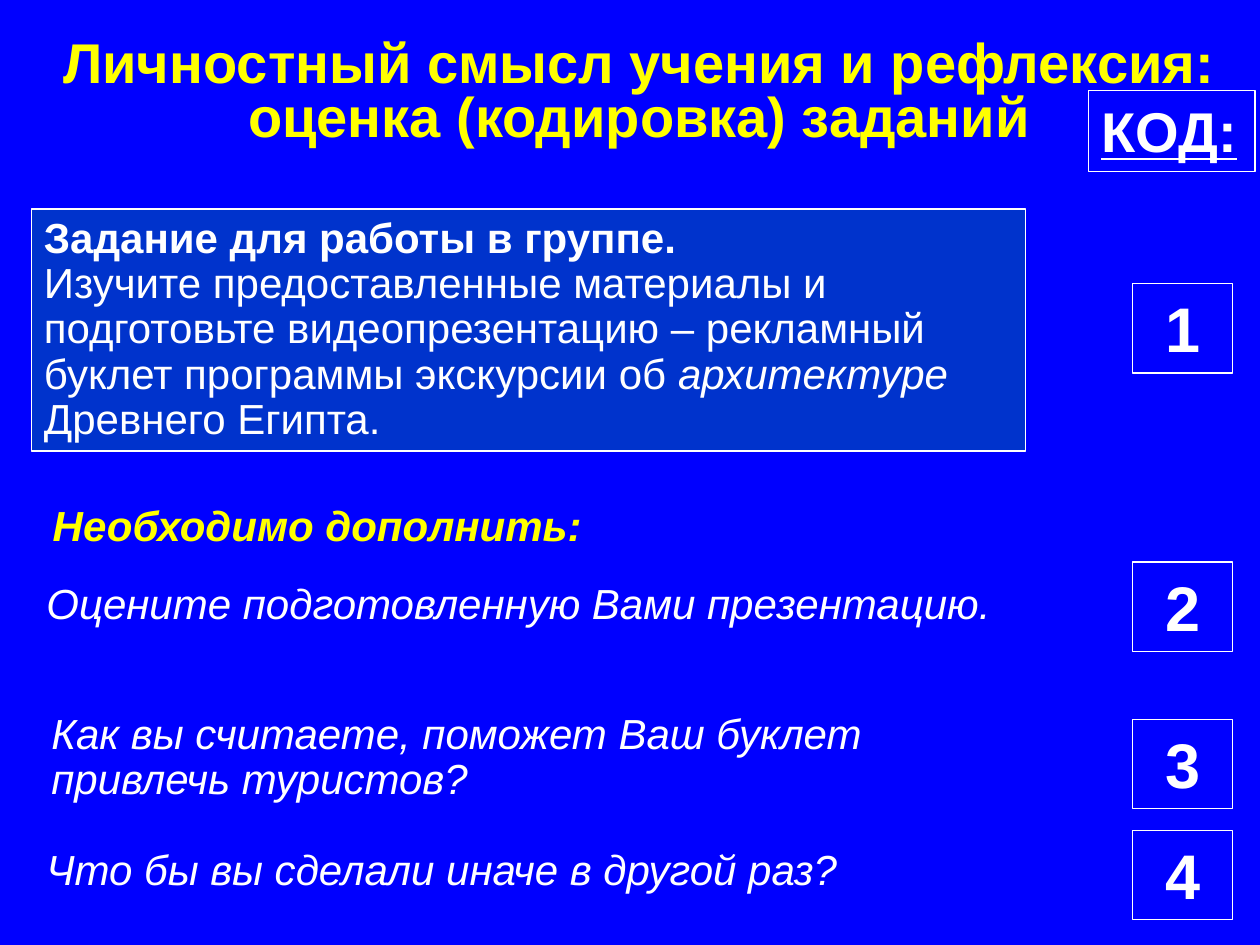
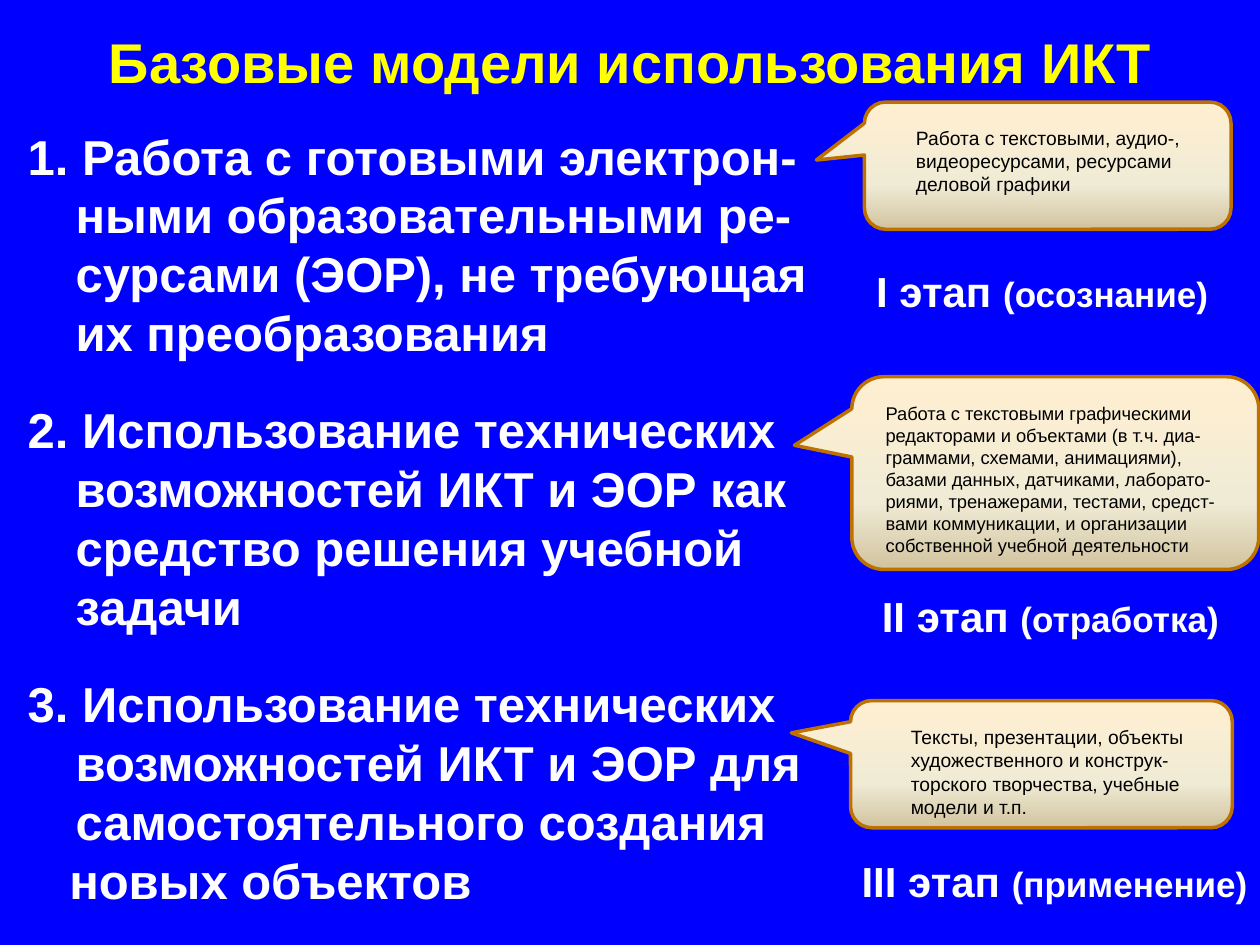
from dataclasses import dataclass

from lxml.etree import SubElement
from pptx import Presentation
from pptx.dml.color import RGBColor
from pptx.enum.shapes import MSO_SHAPE
from pptx.enum.text import MSO_ANCHOR, MSO_AUTO_SIZE, PP_ALIGN
from pptx.oxml.ns import qn
from pptx.util import Inches, Pt


@dataclass(frozen=True)
class Theme:
    font: str = "Arial"
    background: str = "0000FF"
    panel: str = "0033CC"
    accent: str = "FFFF00"
    light: str = "FFFFFF"
    dark: str = "000000"
    callout_line: str = "BD7100"
    callout_stops: tuple = ((0, "FFEFD1"), (65, "F0EBD5"), (100, "D1C39F"))
    title_size: float = 32
    code_size: float = 36
    model_size: float = 28
    text_size: float = 24
    note_size: float = 20
    callout_size: float = 11
    dense_callout_size: float = 10.5


THEME = Theme()
TITLE_ONLY, TITLE_AND_BODY = 5, 1


def set_attributes(target, values):
    for name, value in values.items():
        setattr(target, name, value)


def rgb(value):
    return RGBColor.from_string(value)


def inches(box):
    return [Inches(length) for length in box]


class Deck:
    """Holds the style and the current slide; boxes are (left, top, width, height) in inches."""

    def __init__(self, theme):
        self.theme = theme
        self.presentation = Presentation()
        set_attributes(self.presentation, {"slide_width": Inches(10), "slide_height": Inches(7.5)})
        fill = self.presentation.slide_master.background.fill
        fill.solid()
        fill.fore_color.rgb = rgb(theme.background)
        self.slide = None

    def new_slide(self, layout, title_box, title_lines):
        """Line spacing of the title tightens after its first line."""
        self.slide = self.presentation.slides.add_slide(self.presentation.slide_layouts[layout])
        title = self.slide.shapes.title
        self.place(title, title_box)
        style = {"size": self.theme.title_size, "bold": True, "color": self.theme.accent}
        self.fill_frame(title.text_frame, [[(line, style)] for line in title_lines],
                        alignment=PP_ALIGN.CENTER)
        for paragraph in title.text_frame.paragraphs[1:]:
            paragraph.line_spacing = 0.8

    def place(self, shape, box):
        set_attributes(shape, dict(zip(("left", "top", "width", "height"), inches(box))))

    def fill_frame(self, frame, paragraphs, anchor=MSO_ANCHOR.TOP, **paragraph_format):
        """Each paragraph is a list of (text, style) runs; a newline breaks the line."""
        set_attributes(frame, {"word_wrap": True, "auto_size": MSO_AUTO_SIZE.NONE,
                               "vertical_anchor": anchor})
        for number, runs in enumerate(paragraphs):
            paragraph = frame.add_paragraph() if number else frame.paragraphs[0]
            set_attributes(paragraph, {"alignment": PP_ALIGN.LEFT, **paragraph_format})
            for text, style in runs:
                for line_number, line in enumerate(text.split("\n")):
                    if line_number:
                        paragraph.add_line_break()
                    run = paragraph.add_run()
                    run.text = line
                    self.style_font(run.font, **style)

    def style_font(self, font, size, color=None, **flags):
        set_attributes(font, {"name": self.theme.font, "size": Pt(size), **flags})
        font.color.rgb = rgb(color or self.theme.light)

    def text(self, box, paragraphs, **paragraph_format):
        label = self.slide.shapes.add_textbox(*inches(box))
        self.fill_frame(label.text_frame, paragraphs, **paragraph_format)

    def panel(self, box, paragraphs, fill=None, **text_format):
        frame = self.slide.shapes.add_shape(MSO_SHAPE.RECTANGLE, *inches(box))
        frame.shadow.inherit = False
        if fill:
            frame.fill.solid()
            frame.fill.fore_color.rgb = rgb(fill)
        else:
            frame.fill.background()
        self.outline(frame, self.theme.light, 0.75)
        self.fill_frame(frame.text_frame, paragraphs, **text_format)

    def outline(self, shape, color, width):
        shape.line.color.rgb = rgb(color)
        shape.line.width = Pt(width)

    def callout(self, box, tail):
        """Draws a callout turned by 90 degrees that covers the given box."""
        left, top, width, height = box
        turn = (width - height) / 2
        bubble = self.slide.shapes.add_shape(
            MSO_SHAPE.ROUNDED_RECTANGULAR_CALLOUT,
            *inches((left + turn, top - turn, height, width)))
        bubble.rotation = 90
        bubble.shadow.inherit = False
        for index, adjustment in enumerate((*tail, 0.167)):
            bubble.adjustments[index] = adjustment
        bubble.fill.gradient()
        bubble.fill.gradient_angle = 0
        stops = bubble._element.spPr.find(qn("a:gradFill")).find(qn("a:gsLst"))
        stops.clear()
        for position, color in self.theme.callout_stops:
            stop = SubElement(stops, qn("a:gs"), pos=str(position * 1000))
            SubElement(stop, qn("a:srgbClr"), val=color)
        self.outline(bubble, self.theme.callout_line, 2)

    def body_list(self, box, items, hanging, gap):
        """Each item is (text, continues), where continues marks a further line of the item above."""
        body = self.slide.placeholders[1]
        self.place(body, box)
        style = {"size": self.theme.model_size, "bold": True}
        self.fill_frame(body.text_frame, [[(text, style)] for text, _ in items])
        for number, (paragraph, (_, continues)) in enumerate(zip(body.text_frame.paragraphs, items)):
            paragraph.space_before = Pt(0 if continues or not number else gap)
            properties = paragraph._p.get_or_add_pPr()
            left, first_line = (0.33, 0) if continues else (hanging, -hanging)
            properties.set("marL", str(Inches(left)))
            properties.set("indent", str(Inches(first_line)))
            SubElement(properties, qn("a:buNone"))


def build_coding_slide(deck):
    theme = deck.theme
    plain = {"size": theme.text_size}
    italic = {**plain, "italic": True}
    deck.new_slide(TITLE_ONLY, (0.35, 0.17, 9.45, 1.06),
                   ["Личностный смысл учения и рефлексия:", "оценка (кодировка) заданий"])
    deck.panel((8.64, 0.72, 1.32, 0.64),
               [[("КОД:", {"size": theme.title_size, "bold": True, "underline": True})]])
    deck.panel((0.25, 1.66, 7.89, 1.92), [
        [("Задание для работы в группе.", {**plain, "bold": True})],
        [("Изучите предоставленные материалы и подготовьте видеопрезентацию – "
          "рекламный буклет программы экскурсии об ", plain),
         ("архитектуре", italic), (" Древнего Египта.", plain)],
    ], fill=theme.panel, anchor=MSO_ANCHOR.MIDDLE, line_spacing=0.9)

    questions = [
        ((0.32, 3.96, 8.19, 0.46), "Необходимо дополнить:",
         {**italic, "bold": True, "color": theme.accent}),
        ((0.27, 4.58, 7.87, 0.46), "Оцените подготовленную Вами презентацию.", italic),
        ((0.31, 5.61, 7.34, 0.83), "Как вы считаете, поможет Ваш буклет привлечь туристов?", italic),
        ((0.27, 6.69, 8.19, 0.46), "Что бы вы сделали иначе в другой раз?", italic),
    ]
    for box, question, style in questions:
        deck.text(box, [[(question, style)]], line_spacing=0.9)

    for code, top in enumerate((2.25, 4.46, 5.71, 6.59), start=1):
        deck.panel((8.99, top, 0.79, 0.71),
                   [[(str(code), {"size": theme.code_size, "bold": True})]],
                   alignment=PP_ALIGN.CENTER)


def build_models_slide(deck):
    theme = deck.theme
    deck.new_slide(TITLE_AND_BODY, (0.36, 0.17, 9.29, 0.64), ["Базовые модели использования ИКТ"])
    models = [
        ("1. Работа с готовыми электрон-ными образовательными ре-сурсами (ЭОР), "
         "не требующая их преобразования", False),
        ("2. Использование технических возможностей ИКТ и ЭОР как средство "
         "решения учебной задачи", False),
        ("3. Использование технических возможностей ИКТ и ЭОР для "
         "самостоятельного создания", False),
        ("новых объектов", True),
    ]
    deck.body_list((0.12, 0.95, 6.5, 6.33), models, hanging=0.38, gap=22)

    stages = [
        ((6.62, 2.06, 3.38, 0.51), "I этап ", "(осознание) "),
        ((6.82, 4.64, 3.11, 0.51), "II этап ", "(отработка) "),
        ((6.72, 6.74, 3.3, 0.51), "III этап ", "(применение) "),
    ]
    for box, stage, meaning in stages:
        deck.text(box, [[(stage, {"size": theme.text_size, "bold": True}),
                         (meaning, {"size": theme.note_size, "bold": True})]],
                  alignment=PP_ALIGN.CENTER)

    examples = [
        ((6.86, 0.81, 2.91, 1.01), (-0.044, 0.631), (7.17, 0.95, 2.41, 0.66), theme.callout_size,
         "Работа с текстовыми, аудио-,\nвидеоресурсами, ресурсами\nделовой графики"),
        ((6.76, 2.99, 3.23, 1.53), (-0.144, 0.641), (6.93, 3.14, 2.91, 1.51),
         theme.dense_callout_size,
         "Работа с текстовыми графическими\nредакторами и объектами (в т.ч. диа-граммами, "
         "схемами, анимациями), базами данных, датчиками, лаборато-риями, тренажерами, "
         "тестами, средст-вами коммуникации, и организации собственной учебной деятельности"),
        ((6.75, 5.56, 3.03, 1.01), (-0.246, 0.655), (7.13, 5.71, 2.41, 0.7), theme.callout_size,
         "Тексты, презентации, объекты\nхудожественного и конструк-\n"
         "торского творчества, учебные\nмодели и т.п."),
    ]
    for bubble_box, tail, text_box, size, example in examples:
        deck.callout(bubble_box, tail)
        deck.text(text_box, [[(example, {"size": size, "color": theme.dark})]])


def main():
    deck = Deck(THEME)
    build_coding_slide(deck)
    build_models_slide(deck)
    deck.presentation.save("out.pptx")


if __name__ == "__main__":
    main()
